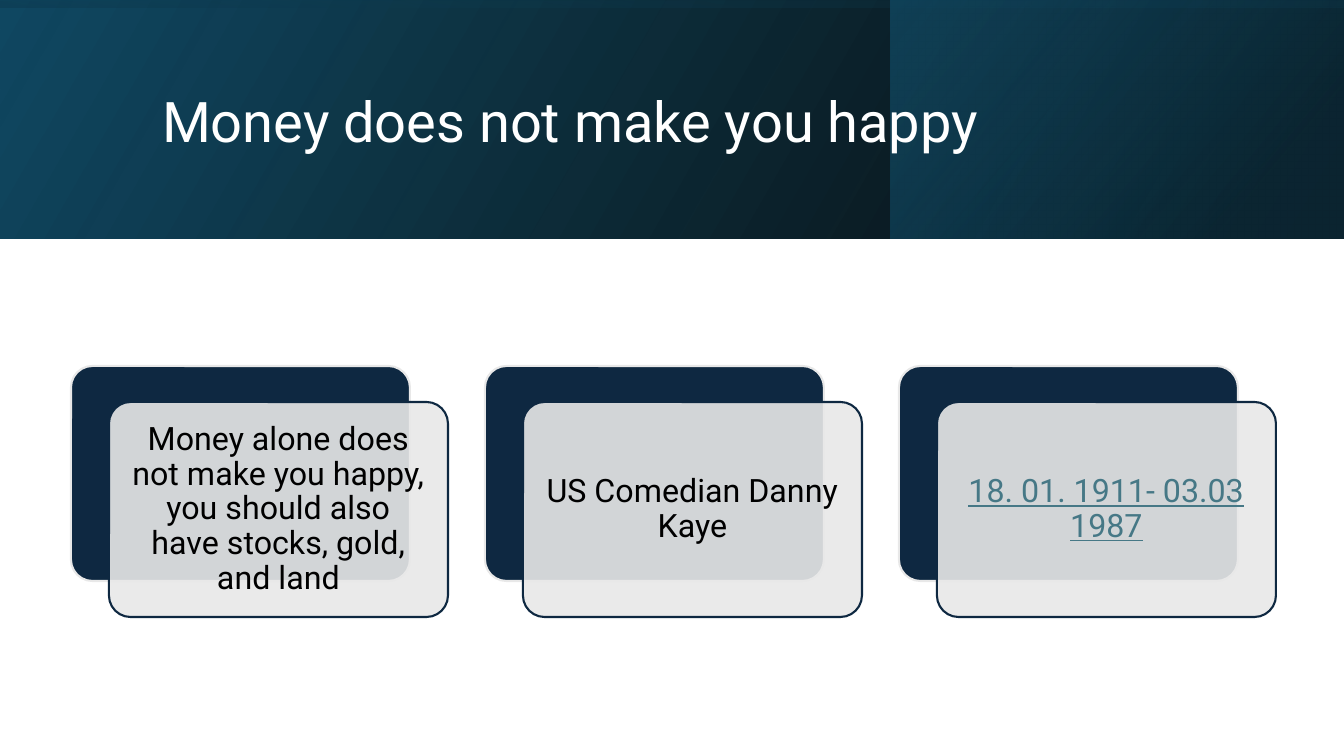
import pptx
import pptx.util
import pptx.dml.color
import pptx.enum.shapes
import pptx.enum.text
import lxml.etree

HEADING = "Money does not make you happy"
COLORS = {
    "navy": "0E2841", "mist": "E8E8E8", "teal": "104862", "deep": "0B3041",
    "sea": "156082", "black": "000000", "white": "FFFFFF", "date": "467886",
}
CARDS = [
    ("Money alone does not make you happy, you should also have stocks, gold, and land",
     {"color": "black", "underline": False}),
    ("US Comedian Danny Kaye", {"color": "black", "underline": False}),
    ("18. 01. 1911- 03.03 1987", {"color": "date", "underline": True}),
]
SLIDE_WIDTH, SLIDE_HEIGHT, BAND_HEIGHT = 1344, 756, 239
TURN_SHIFT = (SLIDE_WIDTH - BAND_HEIGHT) // 2
BANDS = [
    {"box": (0, 0, SLIDE_WIDTH, BAND_HEIGHT), "turn": 0, "angle": 330,
     "stops": [(0, "black", 96), (100, "teal", 100)]},
    {"box": (891, 0, 452, BAND_HEIGHT), "turn": 0, "angle": 320,
     "stops": [(19, "deep", 68), (100, "sea", 48)]},
    {"box": (TURN_SHIFT, -TURN_SHIFT, BAND_HEIGHT, SLIDE_WIDTH), "turn": 270, "angle": 350,
     "stops": [(23, "teal", 16), (99, "black", 45)]},
]
TITLE_BOX = (152, 38, 1072, 173)
CARD_LEFT, CARD_TOP, CARD_WIDTH, CARD_HEIGHT = 71, 366, 339, 215
CARD_STEP, FRONT_RIGHT, FRONT_DOWN, CARD_MARGIN = 414, 38, 36, 16
EMU_PER_PX = 914400 / 100.8
PRESETS = pptx.enum.shapes.MSO_SHAPE
MIDDLE = pptx.enum.text.MSO_ANCHOR.MIDDLE
ALIGN = pptx.enum.text.PP_ALIGN


def px(length):
    return pptx.util.Emu(round(length * EMU_PER_PX))


def rgb(name):
    return pptx.dml.color.RGBColor.from_string(COLORS[name])


def apply(target, values):
    for key, value in values.items():
        setattr(target, key, value)


def set_opacity(fill_element, percent):
    color = next(fill_element.iter(pptx.oxml.ns.qn("a:srgbClr")))
    alpha = lxml.etree.SubElement(color, pptx.oxml.ns.qn("a:alpha"))
    alpha.set("val", str(percent * 1000))


def add_band(shapes, box, turn, angle, stops):
    band = shapes.add_shape(PRESETS.RECTANGLE, *map(px, box))
    apply(band, {"rotation": turn})
    band.shadow.inherit = False
    band.line.fill.background()
    band.fill.gradient()
    band.fill.gradient_angle = 360 - angle
    elements = band._element.spPr.iter(pptx.oxml.ns.qn("a:gs"))
    for stop, element, (position, color, opacity) in zip(
            band.fill.gradient_stops, elements, stops):
        stop.position = position / 100
        stop.color.rgb = rgb(color)
        set_opacity(element, opacity)
    band._element.spPr.xfrm.set("flipH", "1")


def add_card(shapes, left, top, fill, line):
    card = shapes.add_shape(PRESETS.ROUNDED_RECTANGLE,
                            *map(px, (left, top, CARD_WIDTH, CARD_HEIGHT)))
    card.adjustments[0] = 0.1
    card.shadow.inherit = False
    card.fill.solid()
    card.fill.fore_color.rgb = rgb(fill)
    card.line.color.rgb = rgb(line)
    card.line.width = pptx.util.Pt(1.5)
    return card


def write(frame, words, size, color, align, underline=False):
    apply(frame, {"text": words, "word_wrap": True, "vertical_anchor": MIDDLE})
    paragraph = frame.paragraphs[0]
    apply(paragraph, {"alignment": align, "line_spacing": 0.9})
    font = paragraph.runs[0].font
    apply(font, {"size": pptx.util.Pt(size), "name": "Roboto", "underline": underline})
    font.color.rgb = rgb(color)


def main():
    deck = pptx.Presentation()
    apply(deck, {"slide_width": px(SLIDE_WIDTH), "slide_height": px(SLIDE_HEIGHT)})
    slide = deck.slides.add_slide(deck.slide_layouts[5])
    shapes = slide.shapes

    for band in BANDS:
        add_band(shapes, **band)

    title = shapes.title
    apply(title, dict(zip(("left", "top", "width", "height"), map(px, TITLE_BOX))))
    write(title.text_frame, HEADING, 40, "white", ALIGN.LEFT)
    shapes._spTree.append(title._element)

    quote = shapes.add_group_shape().shapes
    for index, (words, style) in enumerate(CARDS):
        left = CARD_LEFT + index * CARD_STEP
        add_card(quote, left, CARD_TOP, "navy", "mist")
        front = add_card(quote, left + FRONT_RIGHT, CARD_TOP + FRONT_DOWN, "mist", "navy")
        set_opacity(front._element.spPr, 90)
        margins = ("margin_left", "margin_top", "margin_right", "margin_bottom")
        apply(front.text_frame, dict.fromkeys(margins, px(CARD_MARGIN)))
        write(front.text_frame, words, 23, align=ALIGN.CENTER, **style)

    deck.save("out.pptx")


if __name__ == "__main__":
    main()
